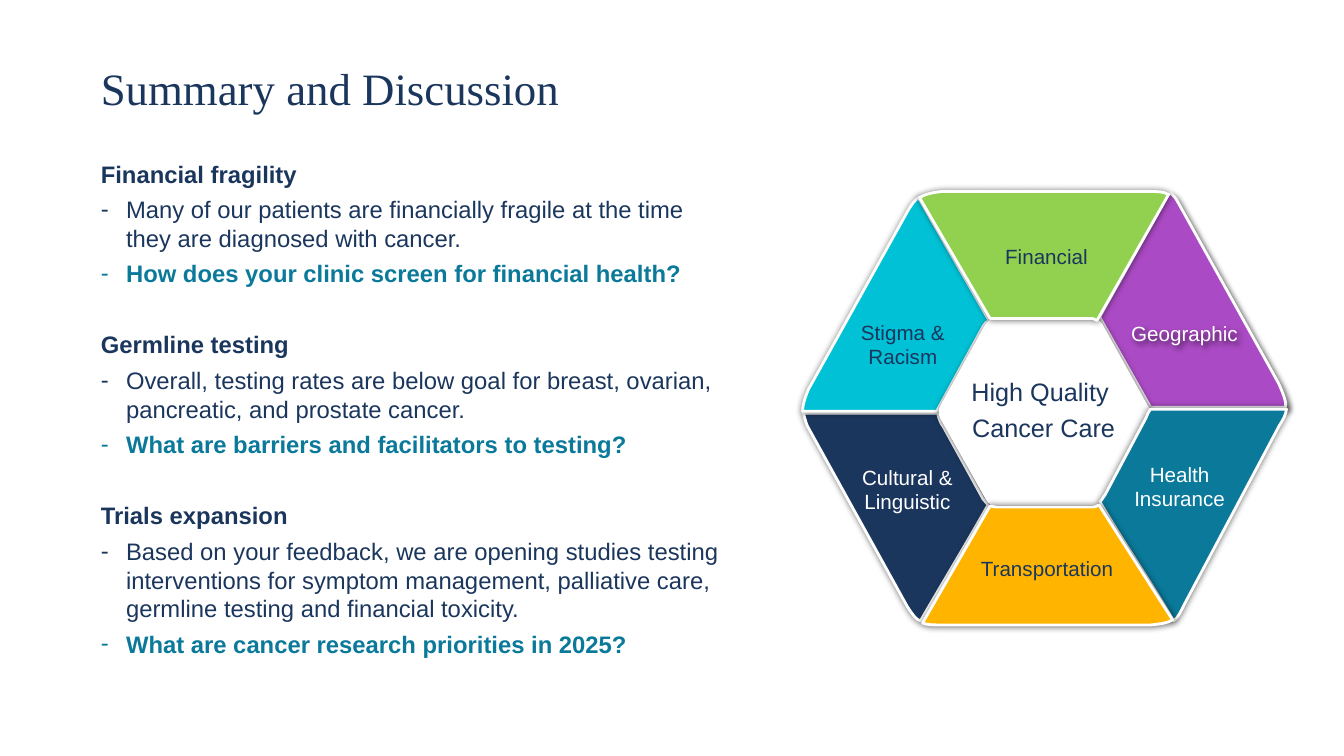
import dataclasses

import lxml.etree
import pptx
import pptx.dml.color
import pptx.enum.text
import pptx.oxml.ns
import pptx.util

NAVY = pptx.dml.color.RGBColor(0x1B, 0x36, 0x5D)
TEAL = pptx.dml.color.RGBColor(0x0A, 0x79, 0x9A)
PURPLE = pptx.dml.color.RGBColor(0xAA, 0x4A, 0xC4)
CYAN = pptx.dml.color.RGBColor(0x00, 0xC1, 0xD5)
AMBER = pptx.dml.color.RGBColor(0xFF, 0xB5, 0x00)
GREEN = pptx.dml.color.RGBColor(0x92, 0xD0, 0x50)
WHITE = pptx.dml.color.RGBColor(0xFF, 0xFF, 0xFF)

PX = 9144  # EMU in one px, 100 px to the inch
CENTER = pptx.enum.text.PP_ALIGN.CENTER
LEFT = pptx.enum.text.PP_ALIGN.LEFT
MIDDLE = pptx.enum.text.MSO_ANCHOR.MIDDLE
qn = pptx.oxml.ns.qn


@dataclasses.dataclass
class Panel:
    """A step of two numbers is a line, a step of six is a Bezier curve."""
    fill: pptx.dml.color.RGBColor
    outline: list[tuple[int, ...]]
    shadow_blur: int = 5
    shadow_distance: int = 0
    shadow_degrees: int = 0


@dataclasses.dataclass
class Label:
    text: str
    left: int
    top: int
    width: int
    height: int
    color: pptx.dml.color.RGBColor
    align: pptx.enum.text.PP_ALIGN = CENTER
    shadowed: bool = False


@dataclasses.dataclass
class Topic:
    heading: str
    statement: str
    question: str


CULTURAL = Panel(NAVY, [
    (797, 410), (930, 410), (931, 415, 933, 420, 936, 424), (975, 495),
    (977, 497, 979, 500, 980, 501), (958, 540, 935, 578, 913, 616),
    (909, 615, 906, 611, 900, 602), (801, 423), (800, 421, 798, 415, 797, 410)])
GEOGRAPHIC = Panel(PURPLE, [
    (1160, 191), (1163, 193, 1166, 196, 1168, 200), (1268, 380),
    (1274, 393, 1276, 400, 1275, 404), (1141, 404),
    (1139, 400, 1137, 397, 1136, 395), (1092, 317), (1091, 314)], 4, 3, 45)
STIGMA = Panel(CYAN, [
    (911, 196), (981, 318), (978, 319, 977, 321, 975, 324), (929, 408),
    (796, 408), (796, 403, 798, 395, 802, 386), (900, 210),
    (904, 203, 907, 199, 911, 196)])
HUB = Panel(WHITE, [
    (934, 415), (931, 408, 932, 407, 935, 401), (977, 325),
    (981, 319, 982, 317, 990, 317), (1083, 317),
    (1088, 317, 1090, 319, 1092, 322), (1136, 401),
    (1141, 409, 1140, 410, 1136, 417), (1095, 491),
    (1092, 497, 1091, 500, 1081, 500), (993, 500),
    (985, 500, 983, 502, 978, 493)])
INSURANCE = Panel(TEAL, [
    (1141, 406), (1150, 406, 1231, 406, 1276, 406),
    (1275, 412, 1273, 416, 1269, 422), (1175, 599),
    (1171, 607, 1169, 612, 1164, 616), (1140, 575, 1115, 539, 1091, 498),
    (1093, 496, 1095, 492, 1096, 491), (1137, 414),
    (1138, 411, 1138, 411, 1141, 406)])
TRANSPORT = Panel(AMBER, [
    (1090, 501), (1163, 615), (1158, 618, 1152, 619, 1141, 620), (936, 620),
    (926, 620, 919, 620, 915, 618), (982, 502), (987, 503, 986, 503, 992, 503),
    (1081, 503), (1085, 503, 1088, 503, 1090, 501)])
FINANCIAL = Panel(GREEN, [
    (1159, 193), (1088, 318), (1086, 316, 1084, 316, 1080, 316), (982, 316),
    (912, 196), (917, 193, 924, 191, 934, 190), (1140, 190),
    (1149, 190, 1154, 190, 1159, 193)])

LABELS = [
    Label("Geographic", 1112, 313, 143, 35, WHITE, LEFT, True),
    Label("Health\nInsurance", 1096, 453, 148, 46, WHITE),
    Label("Cultural &\nLinguistic", 826, 456, 148, 46, WHITE),
    Label("Stigma &\nRacism", 828, 312, 135, 46, NAVY),
    Label("Financial", 987, 237, 111, 33, NAVY, LEFT),
    Label("Transportation", 947, 547, 183, 35, NAVY),
]

TOPICS = [
    Topic("Financial fragility",
          "Many of our patients are financially fragile at the time they are diagnosed with cancer.",
          "How does your clinic screen for financial health?"),
    Topic("Germline testing",
          "Overall, testing rates are below goal for breast, ovarian, pancreatic, and prostate cancer.",
          "What are barriers and facilitators to testing?"),
    Topic("Trials expansion",
          "Based on your feedback, we are opening studies testing interventions for symptom "
          "management, palliative care, germline testing and financial toxicity.",
          "What are cancer research priorities in 2025?"),
]


def style(paragraph, size: float, color, bold: bool = False, font: str = "Arial") -> None:
    for run in paragraph.runs:
        run.font.name = font
        run.font.size = pptx.util.Pt(size)
        run.font.bold = bold
        run.font.color.rgb = color


def add_shadow(shape, blur: int, distance: int, degrees: int) -> None:
    shape.shadow.inherit = False
    effects = shape._element.spPr.find(qn("a:effectLst"))
    shadow = lxml.etree.SubElement(
        effects, qn("a:outerShdw"), blurRad=str(blur * 12700),
        dist=str(distance * 12700), dir=str(degrees * 60000), algn="ctr", rotWithShape="0")
    black = lxml.etree.SubElement(shadow, qn("a:srgbClr"), val="000000")
    lxml.etree.SubElement(black, qn("a:alpha"), val="60000")


def add_panel(slide, panel: Panel):
    corners = [step[-2:] for step in panel.outline]
    builder = slide.shapes.build_freeform(*corners[0], scale=PX)
    builder.add_line_segments(corners[1:], close=True)
    shape = builder.convert_to_shape()

    # Bend the segments that are curves
    left, top = (min(values) for values in zip(*corners))
    segments = list(shape._element.iter(qn("a:lnTo")))
    for step, segment in zip(panel.outline[1:], segments):
        if len(step) == 6:
            curve = lxml.etree.Element(qn("a:cubicBezTo"))
            for x, y in zip(step[::2], step[1::2]):
                lxml.etree.SubElement(curve, qn("a:pt"), x=str(x - left), y=str(y - top))
            segment.getparent().replace(segment, curve)

    shape.fill.solid()
    shape.fill.fore_color.rgb = panel.fill
    shape.line.color.rgb = WHITE
    shape.line.width = pptx.util.Pt(2)
    add_shadow(shape, panel.shadow_blur, panel.shadow_distance, panel.shadow_degrees)
    return shape


def add_text(slide, left: int, top: int, width: int, height: int, inset: bool = True):
    box = slide.shapes.add_textbox(left * PX, top * PX, width * PX, height * PX)
    frame = box.text_frame
    frame.word_wrap = True
    if not inset:
        frame.margin_left = frame.margin_top = frame.margin_right = frame.margin_bottom = 0
    return box


def add_label(slide, label: Label) -> None:
    box = add_text(slide, label.left, label.top, label.width, label.height)
    box.text_frame.text = label.text
    for paragraph in box.text_frame.paragraphs:
        paragraph.alignment = label.align
        style(paragraph, 14.7, label.color)
    if label.shadowed:
        add_shadow(box, 4, 3, 45)


def add_topics(frame, topics: list[Topic]) -> None:
    paragraph = frame.paragraphs[0]
    for index, topic in enumerate(topics):
        if index:
            paragraph = frame.add_paragraph()
            paragraph.space_before = pptx.util.Pt(30.5)
        paragraph.text = topic.heading
        style(paragraph, 17, NAVY, bold=True)
        for text, color, bold in ((topic.statement, NAVY, False), (topic.question, TEAL, True)):
            paragraph = frame.add_paragraph()
            paragraph.text = text
            paragraph.space_before = pptx.util.Pt(5)
            style(paragraph, 17, color, bold)
            properties = paragraph._p.get_or_add_pPr()
            properties.set("marL", str(25 * PX))
            properties.set("indent", str(-25 * PX))
            lxml.etree.SubElement(properties, qn("a:buFont"), typeface="Arial")
            lxml.etree.SubElement(properties, qn("a:buChar"), char="-")


def main() -> None:
    deck = pptx.Presentation()
    deck.slide_width, deck.slide_height = 1333 * PX, 750 * PX
    slide = deck.slides.add_slide(deck.slide_layouts[6])

    # Title
    title = add_text(slide, 100, 40, 1133, 100, inset=False).text_frame
    title.vertical_anchor = MIDDLE
    title.text = "Summary and Discussion"
    title.paragraphs[0].line_spacing = 0.9
    style(title.paragraphs[0], 32, NAVY, font="Times New Roman")

    # Discussion topics
    add_topics(add_text(slide, 100, 158, 629, 500, inset=False).text_frame, TOPICS)

    # Hexagon: three panels, the hub, three panels
    for panel in (CULTURAL, GEOGRAPHIC, STIGMA):
        add_panel(slide, panel)
    hub = add_panel(slide, HUB).text_frame
    hub.vertical_anchor = MIDDLE
    hub.text = "High Quality \nCancer Care"
    for paragraph in hub.paragraphs:
        paragraph.alignment = CENTER
        paragraph.line_spacing = 0.9
        paragraph.space_after = pptx.util.Pt(6.3)
        style(paragraph, 18, NAVY)
    for panel in (INSURANCE, TRANSPORT, FINANCIAL):
        add_panel(slide, panel)

    # Panel labels
    for label in LABELS:
        add_label(slide, label)

    deck.save("out.pptx")


if __name__ == "__main__":
    main()
